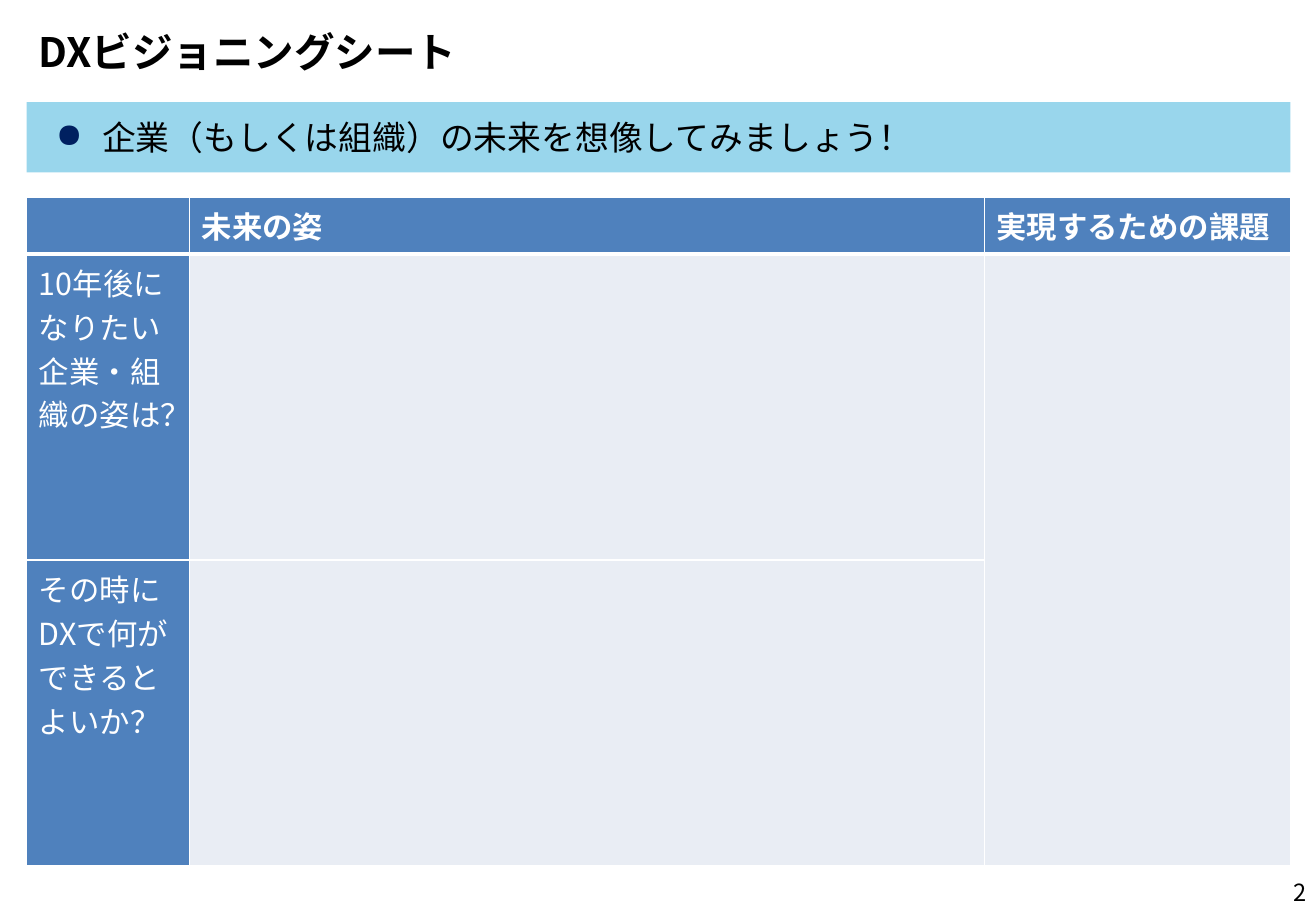
import pptx
import pptx.util
import pptx.dml.color
import pptx.enum.shapes
import pptx.enum.text
import pptx.oxml

Inches = pptx.util.Inches
Pt = pptx.util.Pt
RGBColor = pptx.dml.color.RGBColor
Align = pptx.enum.text.PP_ALIGN
Anchor = pptx.enum.text.MSO_ANCHOR

FONT = "Noto Sans CJK JP"
BLACK = RGBColor(0x00, 0x00, 0x00)
WHITE = RGBColor(0xFF, 0xFF, 0xFF)
NAVY = RGBColor(0x00, 0x20, 0x60)
SKY = RGBColor(0x99, 0xD6, 0xEC)
BLUE = RGBColor(0x4F, 0x81, 0xBD)
PALE = RGBColor(0xE9, 0xED, 0xF4)
NAMESPACE = 'xmlns:a="http://schemas.openxmlformats.org/drawingml/2006/main"'
LEFT, WIDTH = 0.22, 10.4


def write(frame, text, size=18, color=BLACK, bold=False, align=Align.LEFT, anchor=Anchor.MIDDLE):
    frame.word_wrap = True
    frame.vertical_anchor = anchor
    frame.text = text
    for para in frame.paragraphs:
        para.alignment = align
        for span in para.runs:
            span.font.name = FONT
            span.font.size = Pt(size)
            span.font.bold = bold
            span.font.color.rgb = color
            span.font._element.append(pptx.oxml.parse_xml(f'<a:ea {NAMESPACE} typeface="{FONT}"/>'))


def add_border(cell, side, points):
    cell._tc.get_or_add_tcPr().append(pptx.oxml.parse_xml(
        f'<a:ln{side} {NAMESPACE} w="{Pt(points)}"><a:solidFill>'
        f'<a:srgbClr val="{WHITE}"/></a:solidFill></a:ln{side}>'))


deck = pptx.Presentation()
deck.slide_width = Inches(10.83)
deck.slide_height = Inches(7.5)
page = deck.slides.add_slide(deck.slide_layouts[6])

title = page.shapes.add_textbox(Inches(LEFT), Inches(0.17), Inches(WIDTH), Inches(0.5))
write(title.text_frame, "DXビジョニングシート", size=24, bold=True)

number = page.shapes.add_textbox(Inches(8.32), Inches(7.14), Inches(2.53), Inches(0.4))
write(number.text_frame, "2", size=14, align=Align.RIGHT)

banner = page.shapes.add_shape(
    pptx.enum.shapes.MSO_SHAPE.RECTANGLE,
    Inches(LEFT), Inches(0.84), Inches(WIDTH), Inches(0.58))
banner.shadow.inherit = False
banner.fill.solid()
banner.fill.fore_color.rgb = SKY
banner.line.fill.background()
frame = banner.text_frame
frame.margin_left = frame.margin_right = Inches(0.24)
frame.margin_top = frame.margin_bottom = Inches(0.12)
write(frame, "企業（もしくは組織）の未来を想像してみましょう！", size=20)
bullet = frame.paragraphs[0]._p.get_or_add_pPr()
bullet.set("marL", str(Inches(0.38)))
bullet.set("indent", str(Inches(-0.38)))
bullet.append(pptx.oxml.parse_xml(f'<a:buClr {NAMESPACE}><a:srgbClr val="{NAVY}"/></a:buClr>'))
bullet.append(pptx.oxml.parse_xml(f'<a:buChar {NAMESPACE} char="●"/>'))

column_widths = [1.34, 6.54, 2.52]
row_heights = [0.47, 2.52, 2.52]
sheet_texts = [
    ["", "未来の姿", "実現するための課題"],
    ["10年後になりたい\n企業・組織の姿は？", "", ""],
    ["その時に\nDXで何ができるとよいか？", "", ""],
]
sheet = page.shapes.add_table(
    len(row_heights), len(column_widths),
    Inches(LEFT), Inches(1.62), Inches(WIDTH), Inches(sum(row_heights))).table
for column, width in zip(sheet.columns, column_widths):
    column.width = Inches(width)
for row, height in zip(sheet.rows, row_heights):
    row.height = Inches(height)

for row_index, texts in enumerate(sheet_texts):
    for column_index, text in enumerate(texts):
        cell = sheet.cell(row_index, column_index)
        is_header = row_index == 0
        borders = {"L": 1, "R": 1, "T": 3 if row_index == 1 else 1, "B": 3 if is_header else 1}
        for side, points in borders.items():
            add_border(cell, side, points)
        cell.fill.solid()
        cell.fill.fore_color.rgb = BLUE if is_header or column_index == 0 else PALE
        if text:
            write(cell.text_frame, text, color=WHITE, bold=is_header, anchor=Anchor.TOP)
sheet.cell(1, 2).merge(sheet.cell(2, 2))

deck.save("out.pptx")
